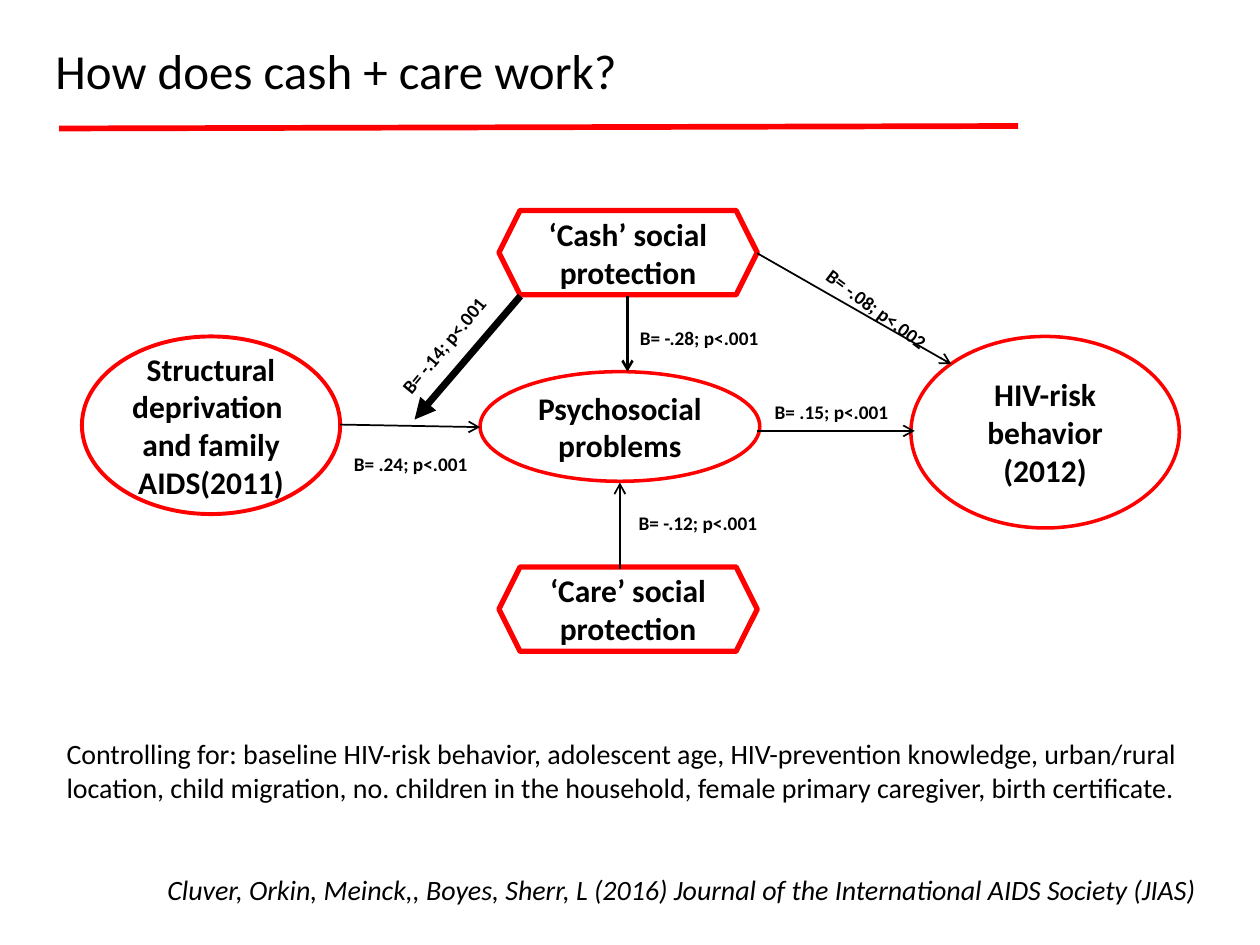
from lxml import etree
from pptx import Presentation
from pptx import util as u
from pptx.dml.color import RGBColor
from pptx.enum import shapes, text
from pptx.oxml.ns import qn

BLACK = RGBColor(0x00, 0x00, 0x00)
WHITE = RGBColor(0xFF, 0xFF, 0xFF)
RED = RGBColor(0xFF, 0x00, 0x00)
FONT = "Calibri"
ELLIPSE = shapes.MSO_SHAPE.OVAL
HEXAGON = shapes.MSO_SHAPE.HEXAGON


class Diagram:
    def __init__(self, slide):
        self.s = slide

    def style(self, p, size, bold=False, italic=False, align=text.PP_ALIGN.LEFT):
        p.alignment = align
        p.font.name = FONT
        p.font.size = u.Pt(size)
        p.font.bold = bold
        p.font.italic = italic
        p.font.color.rgb = BLACK

    def title(self, words, x, y, w, h):
        sp = self.s.shapes.title
        sp.left, sp.top, sp.width, sp.height = map(u.Inches, (x, y, w, h))
        tf = sp.text_frame
        tf.text = words
        tf.vertical_anchor = text.MSO_ANCHOR.TOP
        self.style(tf.paragraphs[0], 28)

    def node(self, kind, lines, x, y, w, h, weight, fill=None):
        sp = self.s.shapes.add_shape(kind, *map(u.Inches, (x, y, w, h)))
        sp.shadow.inherit = False
        if fill is None:
            sp.fill.background()
        else:
            sp.fill.solid()
            sp.fill.fore_color.rgb = fill
        sp.line.color.rgb = RED
        sp.line.width = u.Pt(weight)
        tf = sp.text_frame
        tf.text = "\n".join(lines)
        tf.word_wrap = True
        tf.vertical_anchor = text.MSO_ANCHOR.MIDDLE
        for p in tf.paragraphs:
            self.style(p, 18, bold=True, align=text.PP_ALIGN.CENTER)

    def line(self, start, end, weight=1, color=BLACK, head="arrow"):
        c = self.s.shapes.add_connector(
            shapes.MSO_CONNECTOR.STRAIGHT, *map(u.Inches, start + end))
        c.line.color.rgb = color
        c.line.width = u.Pt(weight)
        if head:
            etree.SubElement(c.line._get_or_add_ln(), qn("a:tailEnd"), type=head)
        etree.SubElement(c._element.spPr, qn("a:effectLst"))

    def textbox(self, words, x, y, w, h):
        sp = self.s.shapes.add_textbox(*map(u.Inches, (x, y, w, h)))
        tf = sp.text_frame
        tf.word_wrap = True
        tf.text = words
        return sp

    def label(self, words, x, y, rotation=0):
        sp = self.textbox(words, x, y, 1.21, 0.29)
        sp.rotation = rotation
        self.style(sp.text_frame.paragraphs[0], 11, bold=True)

    def footer(self, note, citation, x, y, w, h):
        tf = self.textbox(note, x, y, w, h).text_frame
        self.style(tf.paragraphs[0], 16)
        p = tf.add_paragraph()
        p.text = citation
        p.space_before = u.Pt(39)
        self.style(p, 16, italic=True, align=text.PP_ALIGN.RIGHT)


def main():
    prs = Presentation()
    prs.slide_width, prs.slide_height = u.Inches(10), u.Inches(7.5)
    d = Diagram(prs.slides.add_slide(prs.slide_layouts[5]))

    d.title("How does cash + care work?", 0.34, 0.27, 9.16, 0.57)
    d.line((0.47, 1.02), (8.08, 1), 3.25, RED, head=None)

    d.node(ELLIPSE, ["Structural deprivation ", "and family AIDS(2011)"],
           0.65, 2.67, 2.05, 1.41, 2.25)
    d.node(ELLIPSE, ["Psychosocial problems"], 3.81, 2.95, 2.22, 0.87, 2)
    d.node(ELLIPSE, ["HIV-risk behavior (2012)"], 7.23, 2.67, 2.13, 1.52, 2)
    for name, y in (("Cash", 1.67), ("Care", 4.5)):
        d.node(HEXAGON, [f"‘{name}’ social protection"],
               3.96, y, 2.05, 0.67, 3, WHITE)

    d.line((2.7, 3.37), (3.81, 3.39))
    d.line((6.01, 3.42), (7.26, 3.42))
    d.line((4.13, 2.35), (3.29, 3.33), 4, head="triangle")
    d.line((6.01, 2.01), (7.55, 2.89))
    d.line((4.98, 2.35), (4.98, 2.95), 1.5)
    d.line((4.92, 4.52), (4.92, 3.83))

    d.label("B= -.14; p<.001", 2.94, 2.57, 309.5)
    d.label("B= .24; p<.001", 2.71, 3.54)
    d.label("B= -.28; p<.001", 4.98, 2.54)
    d.label("B= -.12; p<.001", 4.97, 4.01)
    d.label("B= -.08; p<.002", 6.38, 2.33, 36.7)
    d.label("B= .15; p<.001", 6.05, 3.13)

    d.footer(
        "Controlling for: baseline HIV-risk behavior, adolescent age, "
        "HIV-prevention knowledge, urban/rural location, child migration, "
        "no. children in the household, female primary caregiver, "
        "birth certificate.",
        "Cluver, Orkin, Meinck,, Boyes, Sherr, L (2016) "
        "Journal of the International AIDS Society (JIAS)",
        0.43, 5.8, 9.16, 1.45)

    prs.save("out.pptx")


if __name__ == "__main__":
    main()
